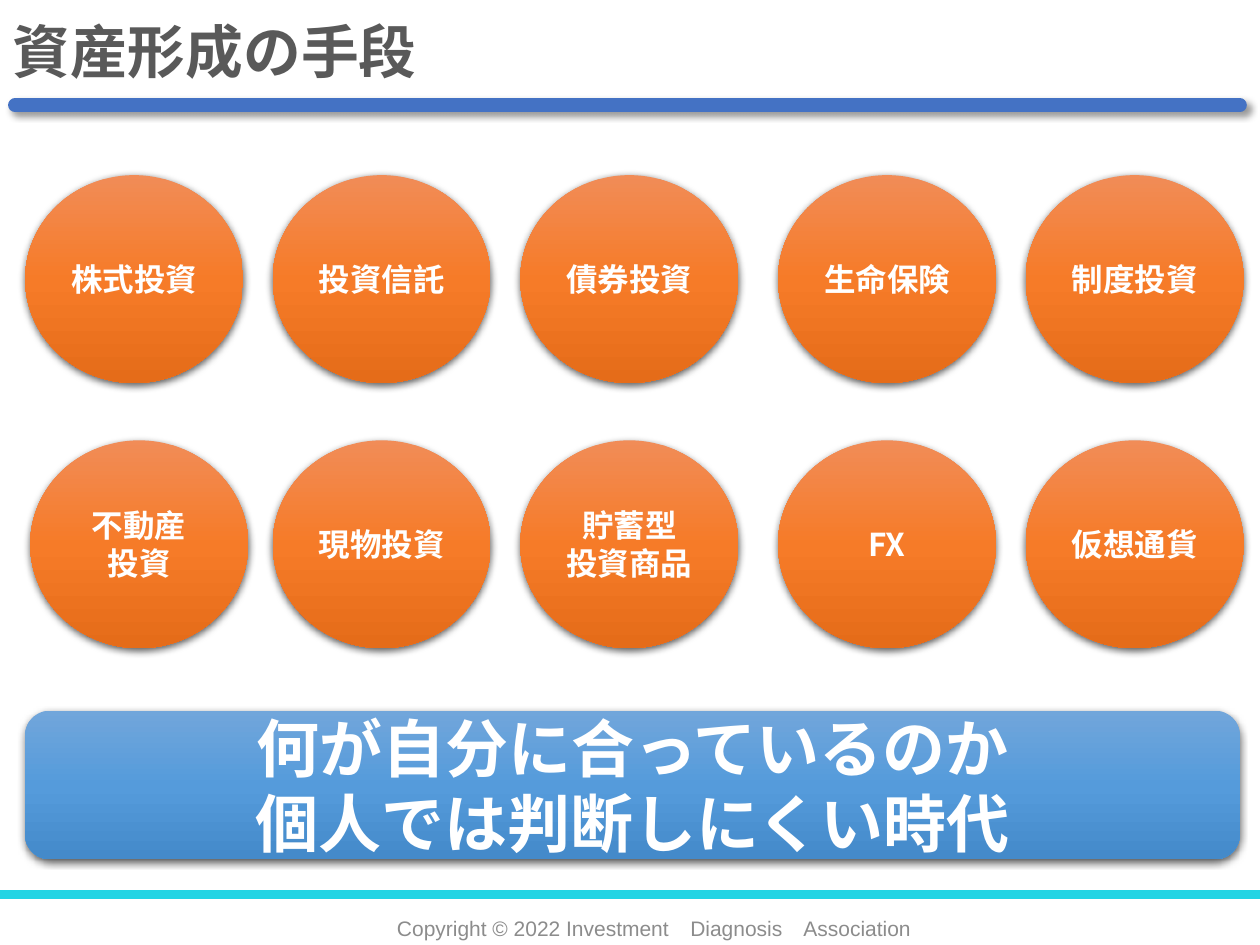
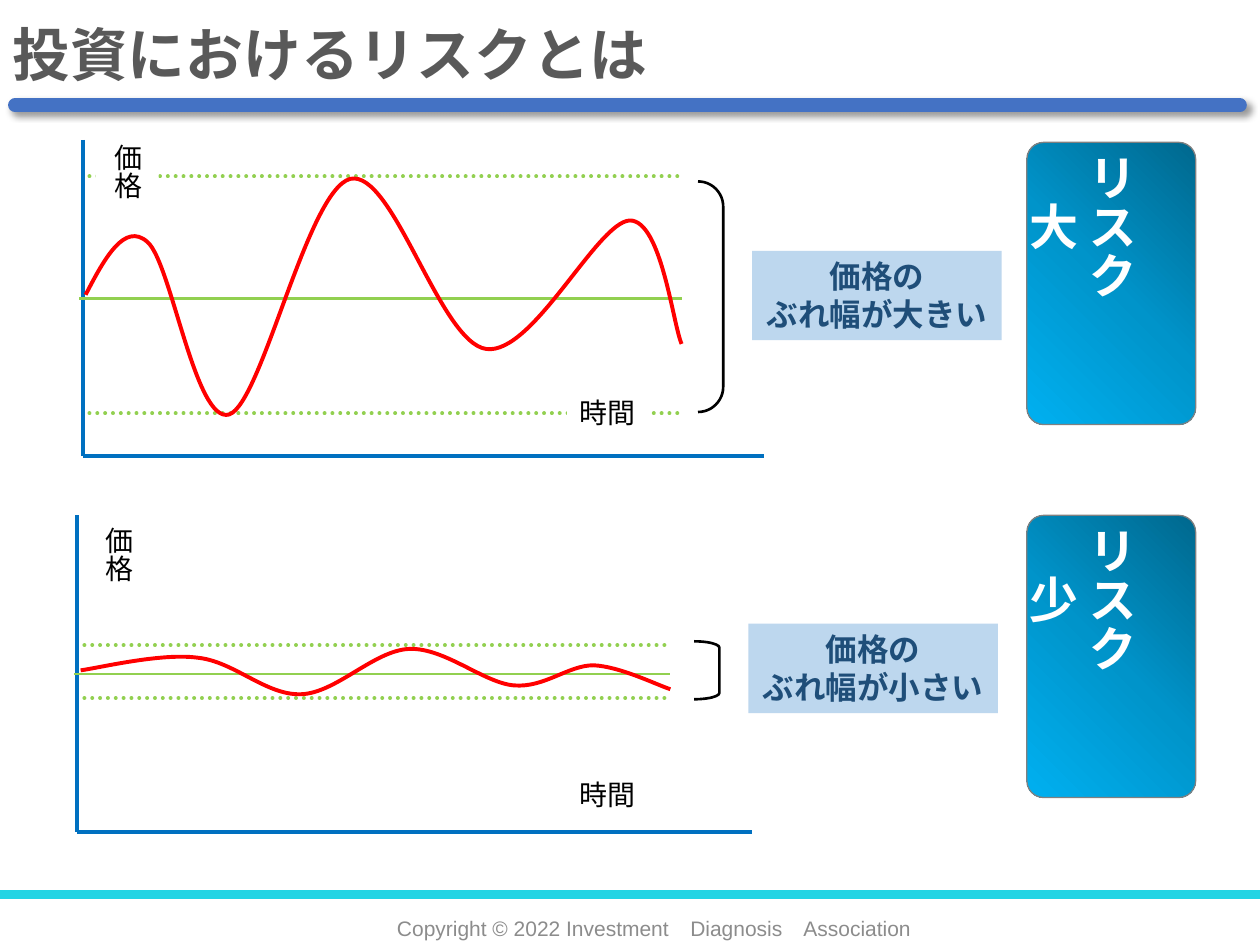
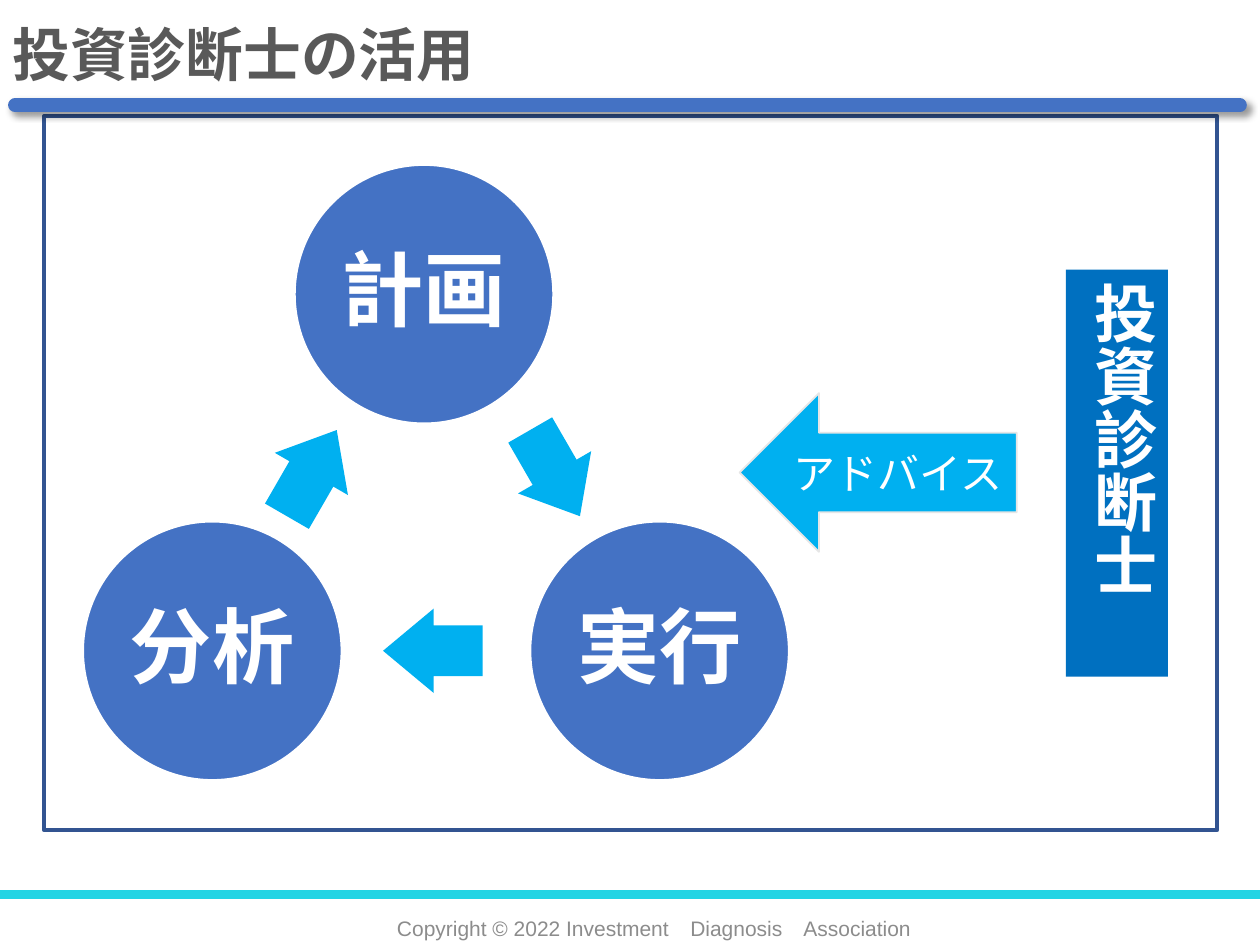
"""Build three slides on ways to invest, investment risk and the use of advisers."""
from dataclasses import dataclass
from itertools import product
from typing import NamedTuple, Optional

from lxml.etree import SubElement
from pptx import Presentation
from pptx.dml.color import RGBColor
from pptx.enum.dml import MSO_LINE
from pptx.enum.shapes import MSO_CONNECTOR, MSO_SHAPE
from pptx.enum.text import MSO_ANCHOR, MSO_AUTO_SIZE, PP_ALIGN
from pptx.oxml.ns import qn
from pptx.util import Emu, Inches, Pt

WIDTH, HEIGHT = Inches(10), Inches(7.5)
COLUMNS = 100
CELL = WIDTH // COLUMNS

JP, LATIN = "Noto Sans CJK JP", "Arial"
WHITE, BLACK = "FFFFFF", "000000"
BLUE, SKY, AXIS = "4472C4", "00B0F0", "0070C0"
GREEN, RED = "92D050", "FF0000"


class Box(NamedTuple):
    x: float
    y: float
    w: float
    h: float


class Point(NamedTuple):
    x: float
    y: float


class Shadow(NamedTuple):
    alpha: int
    blur: float
    distance: float
    angle: int


class Gradient(NamedTuple):
    start: str
    middle: str
    end: str
    angle: int


class Style(NamedTuple):
    size: float
    color: str = WHITE
    bold: bool = True
    font: str = JP
    align: PP_ALIGN = PP_ALIGN.CENTER
    anchor: MSO_ANCHOR = MSO_ANCHOR.MIDDLE
    spacing: float = 1.0
    outline: str = ""
    vertical: bool = False
    wrap: bool = True
    inset: Optional[float] = None


class Stroke(NamedTuple):
    color: str
    width: float
    dash: Optional[MSO_LINE] = None
    rounded: bool = False


RAISED = Shadow(63, 4.5, 1.5, 90)
RULE_SHADOW = Shadow(40, 4, 3, 45)
ORANGE_FADE = Gradient("F18C57", "F67B28", "E56C19", 90)
BLUE_FADE = Gradient("71A6DB", "559BDB", "448ACA", 90)
RISK_FADE = Gradient("00688E", "0094CA", "00B0F0", 135)

TITLE = Style(33, "595959", align=PP_ALIGN.LEFT, spacing=0.9, outline="C0CBF0")
FOOTER = Style(12, "8C8C8C", False, LATIN)
LABEL = Style(16, BLACK, False, align=PP_ALIGN.LEFT, anchor=MSO_ANCHOR.TOP, wrap=False)
PRICE = Style(16, BLACK, False, vertical=True, inset=0)
SWING = Style(18, "1F4E79", anchor=MSO_ANCHOR.TOP, wrap=False)
RISK = Style(28, anchor=MSO_ANCHOR.TOP, vertical=True, inset=0)
STEP = Style(47, spacing=0.9, wrap=False, inset=0.7)
ADVISER = Style(36, align=PP_ALIGN.LEFT, anchor=MSO_ANCHOR.TOP, vertical=True, inset=0.5)


@dataclass
class PricePanel:
    price: Box
    axis_x: float
    axis_top: float
    axis_bottom: float
    axis_right: float
    mean: float
    limits: tuple[float, float]
    guides: tuple[float, float]
    mean_ends: tuple[float, float]
    bracket: Box
    bracket_round: float
    curve: list[Point]
    time: Box
    swing: Box
    swing_lines: list[str]
    risk_y: float
    risk_level: str


BUBBLES = [
    ["株式投資"], ["投資信託"], ["債券投資"], ["生命保険"], ["制度投資"],
    ["不動産", "投資"], ["現物投資"], ["貯蓄型", "投資商品"], ["FX"], ["仮想通貨"],
]

PANELS = [
    PricePanel(
        Box(7.6, 11.4, 5, 5), 6.6, 11.1, 36.2, 60.6, 23.7, (14, 32.8), (7.1, 53.9),
        (6.3, 54.1), Box(55.4, 14.4, 2, 18.3), 1,
        [Point(*xy) for xy in (
            (6.8, 23.4), (8.3, 20.5), (9.9, 17.6), (11.7, 19.2), (13.6, 20.8), (15.5, 33.7),
            (18.2, 32.9), (20.8, 32), (24.4, 15.1), (27.8, 14.2), (31.2, 13.4), (34.9, 27.2),
            (38.6, 27.7), (42.3, 28.2), (47.4, 17.6), (50, 17.5), (52.5, 17.5), (53.4, 25.7),
            (54.1, 27.3))],
        Box(45, 30.9, 6.5, 3.7), Box(59.7, 19.9, 19.8, 7.1), ["価格の", "ぶれ幅が大きい"],
        11.3, "大"),
    PricePanel(
        Box(6.9, 41.8, 5, 5), 6.1, 40.9, 66, 59.7, 53.5, (51.2, 55.4), (6.7, 53),
        (5.9, 53.2), Box(55.1, 50.9, 2, 4.6), 0.25,
        [Point(*xy) for xy in (
            (6.4, 53.2), (7.9, 53), (12.8, 51.8), (15.7, 52.2), (18.6, 52.5), (21.1, 55.2),
            (23.9, 55.1), (26.7, 55), (29.7, 51.6), (32.5, 51.5), (35.3, 51.4), (38.4, 54.2),
            (40.8, 54.4), (43.2, 54.6), (45.1, 52.8), (47.1, 52.8), (49.2, 52.9), (52, 54.3),
            (53.2, 54.7))],
        Box(45, 61.2, 6.5, 3.7), Box(59.4, 49.5, 19.8, 7.1), ["価格の", "ぶれ幅が小さい"],
        40.9, "少"),
]

STEPS = [("計画", 23.4, 13.1), ("実行", 42.1, 41.4), ("分析", 6.6, 41.4)]
CYCLE_ARROWS = [(40.1, 34.2, 60), (30.4, 48.3, 180), (20.8, 34.2, 300)]


def rgb(value: str) -> RGBColor:
    return RGBColor.from_string(value)


def cells(*lengths: float) -> list[Emu]:
    return [Emu(round(length * CELL)) for length in lengths]


def write(sp, lines: list[str], style: Style) -> None:
    tf = sp.text_frame
    tf.word_wrap = style.wrap
    tf.vertical_anchor = style.anchor
    if style.inset is not None:
        (inset,) = cells(style.inset)
        tf.margin_left = tf.margin_right = tf.margin_top = tf.margin_bottom = inset
    if style.vertical:
        sp.element.find(".//" + qn("a:bodyPr")).set("vert", "eaVert")
    for i, content in enumerate(lines):
        p = tf.add_paragraph() if i else tf.paragraphs[0]
        p.alignment = style.align
        p.line_spacing = style.spacing
        r = p.add_run()
        r.text = content
        r.font.name = style.font
        r.font.size = Pt(style.size)
        r.font.bold = style.bold
        r.font.color.rgb = rgb(style.color)
        props = sp.element.findall(".//" + qn("a:rPr"))[-1]
        SubElement(props, qn("a:ea")).set("typeface", style.font)
        if style.outline:
            ln = SubElement(props, qn("a:ln"), w=str(Pt(0.75)))
            fill = SubElement(ln, qn("a:solidFill"))
            SubElement(fill, qn("a:srgbClr"), val=style.outline)
            props.insert(0, ln)


def cast_shadow(effects, shadow: Shadow) -> None:
    outer = SubElement(
        effects, qn("a:outerShdw"), blurRad=str(Pt(shadow.blur)), dist=str(Pt(shadow.distance)),
        dir=str(shadow.angle * 60000), algn="ctr", rotWithShape="0")
    color = SubElement(outer, qn("a:srgbClr"), val=BLACK)
    SubElement(color, qn("a:alpha"), val=str(shadow.alpha * 1000))


def fade(sp, gradient: Gradient) -> None:
    sp.fill.gradient()
    sp.fill.gradient_angle = 360 - gradient.angle
    stops = sp.element.find(".//" + qn("a:gsLst"))
    for old in list(stops):
        stops.remove(old)
    for position, color in zip((0, 50000, 100000), gradient[:3]):
        stop = SubElement(stops, qn("a:gs"), pos=str(position))
        SubElement(stop, qn("a:srgbClr"), val=color)


def paint(sp, fill: str | Gradient | None, stroke: Optional[Stroke]) -> None:
    if isinstance(fill, Gradient):
        fade(sp, fill)
    elif fill:
        sp.fill.solid()
        sp.fill.fore_color.rgb = rgb(fill)
    else:
        sp.fill.background()
    if stroke:
        sp.line.color.rgb = rgb(stroke.color)
        sp.line.width = Pt(stroke.width)
    else:
        sp.line.fill.background()
    sp.shadow.inherit = False


def shape(s, kind: MSO_SHAPE, box: Box, fill: str | Gradient | None = None,
          stroke: Optional[Stroke] = None, shadow: Optional[Shadow] = None,
          adjust: tuple[float, ...] = ()):
    sp = s.shapes.add_shape(kind, *cells(*box))
    for i, value in enumerate(adjust):
        sp.adjustments[i] = value
    paint(sp, fill, stroke)
    if shadow:
        cast_shadow(sp.element.find(".//" + qn("a:effectLst")), shadow)
    return sp


def text(s, box: Box, lines: list[str], style: Style, fill: str = "") -> None:
    sp = s.shapes.add_textbox(*cells(*box))
    if fill:
        paint(sp, fill, None)
    write(sp, lines, style)


def line(s, start: Point, end: Point, stroke: Stroke, shadow: Optional[Shadow] = None) -> None:
    c = s.shapes.add_connector(MSO_CONNECTOR.STRAIGHT, *cells(*start, *end))
    c.line.color.rgb = rgb(stroke.color)
    c.line.width = Pt(stroke.width)
    if stroke.dash:
        c.line.dash_style = stroke.dash
    if stroke.rounded:
        c.element.find(".//" + qn("a:ln")).set("cap", "rnd")
    effects = SubElement(c.element.find(qn("p:spPr")), qn("a:effectLst"))
    if shadow:
        cast_shadow(effects, shadow)


def curve(s, points: list[Point], stroke: Stroke) -> None:
    builder = s.shapes.build_freeform(*cells(*points[0]))
    builder.add_line_segments([cells(*point) for point in points[1:]], close=False)
    sp = builder.convert_to_shape()
    paint(sp, None, stroke)
    segments = list(sp.element.iter(qn("a:lnTo")))
    for i in range(0, len(segments), 3):
        bezier = SubElement(segments[i].getparent(), qn("a:cubicBezTo"))
        for segment in segments[i:i + 3]:
            bezier.append(segment[0])
            segment.getparent().remove(segment)


def add_slide(prs):
    s = prs.slides.add_slide(prs.slide_layouts[6])
    text(s, Box(25.5, 72.8, 52.8, 1.7), ["Copyright © 2022 Investment　Diagnosis　Association"],
         FOOTER)
    line(s, Point(0, 71), Point(COLUMNS, 71), Stroke("22D4E4", 5))
    return s


def add_title(s, title: str, height: float = 9.1) -> None:
    line(s, Point(1.2, 8.35), Point(98.4, 8.35), Stroke(BLUE, 8, rounded=True), RULE_SHADOW)
    text(s, Box(0, 0, 94, height), [title], TITLE)


def add_means(prs) -> None:
    s = add_slide(prs)
    add_title(s, "資産形成の手段", 8.7)
    for (row, col), lines in zip(product(range(2), range(5)), BUBBLES):
        x = 2 + 19.65 * col + (0.8 if col > 2 else 0)
        nudge = 0.4 if (row, col) == (1, 0) else 0
        bubble = shape(s, MSO_SHAPE.OVAL, Box(x + nudge, 13.9 + 21.05 * row, 17.3, 16.5),
                       ORANGE_FADE, shadow=RAISED)
        write(bubble, lines, Style(18))
    banner = shape(s, MSO_SHAPE.ROUNDED_RECTANGLE, Box(2, 56.4, 96.4, 11.8), BLUE_FADE,
                   shadow=RAISED)
    write(banner, ["何が自分に合っているのか", "個人では判断しにくい時代"], Style(36))


def add_price_panel(s, panel: PricePanel) -> None:
    axis = Stroke(AXIS, 2.25)
    dots = Stroke(GREEN, 2.25, MSO_LINE.ROUND_DOT, True)
    corner = Point(panel.axis_x, panel.axis_bottom)
    shape(s, MSO_SHAPE.RIGHT_BRACKET, panel.bracket, stroke=Stroke(BLACK, 1.5),
          adjust=(panel.bracket_round,))
    line(s, Point(panel.axis_x, panel.axis_top), corner, axis)
    line(s, corner, Point(panel.axis_right, panel.axis_bottom), axis)
    left, right = panel.mean_ends
    line(s, Point(left, panel.mean), Point(right, panel.mean), Stroke(GREEN, 1.5))
    left, right = panel.guides
    for y in panel.limits:
        line(s, Point(left, y), Point(right, y), dots)
    curve(s, panel.curve, Stroke(RED, 2.25))
    text(s, panel.price, ["価格"], PRICE, WHITE)
    for box, fill, lines, style in (
            (panel.time, WHITE, ["時間"], LABEL),
            (panel.swing, "BDD7EE", panel.swing_lines, SWING)):
        write(shape(s, MSO_SHAPE.RECTANGLE, box, fill), lines, style)
    shape(s, MSO_SHAPE.ROUNDED_RECTANGLE, Box(81.5, panel.risk_y, 13.4, 22.4), RISK_FADE,
          Stroke("808080", 0.75), adjust=(0.1,))
    text(s, Box(80, panel.risk_y + 0.9, 10.5, 13), ["リスク", panel.risk_level], RISK)


def add_risk(prs) -> None:
    s = add_slide(prs)
    for panel in PANELS:
        add_price_panel(s, panel)
    add_title(s, "投資におけるリスクとは")


def add_advisers(prs) -> None:
    s = add_slide(prs)
    for name, x, y in STEPS:
        step = shape(s, MSO_SHAPE.OVAL, Box(x, y, 20.5, 20.5), BLUE, Stroke(WHITE, 1))
        write(step, [name], STEP)
    for x, y, angle in CYCLE_ARROWS:
        arrow = shape(s, MSO_SHAPE.RIGHT_ARROW, Box(x, y, 7.9, 6.7), SKY, adjust=(0.6, 0.6))
        arrow.rotation = angle
    adviser = shape(s, MSO_SHAPE.RECTANGLE, Box(84.6, 21.4, 8.1, 32.3), AXIS)
    write(adviser, ["投資診断士"], ADVISER)
    adviser.text_frame.auto_size = MSO_AUTO_SIZE.SHAPE_TO_FIT_TEXT
    advice = shape(s, MSO_SHAPE.LEFT_ARROW, Box(58.7, 31.2, 22, 12.6), SKY, Stroke("E6E6E6", 1))
    write(advice, ["アドバイス"], Style(24, bold=False))
    shape(s, MSO_SHAPE.RECTANGLE, Box(3.5, 9.2, 93.1, 56.7), stroke=Stroke("325491", 2.25))
    add_title(s, "投資診断士の活用")


def main() -> None:
    prs = Presentation()
    prs.slide_width, prs.slide_height = WIDTH, HEIGHT
    for build in (add_means, add_risk, add_advisers):
        build(prs)
    prs.save("out.pptx")


if __name__ == "__main__":
    main()
